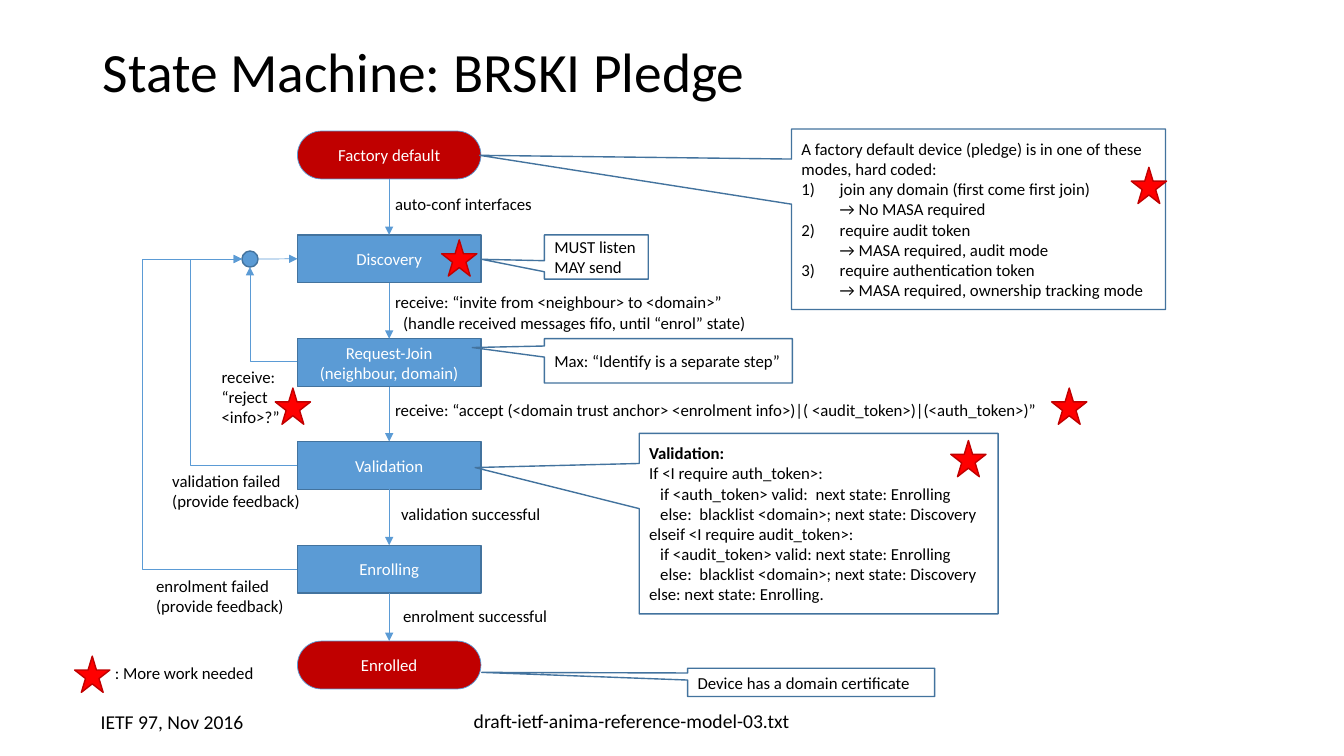
import pptx
import pptx.util
import pptx.dml.color
import pptx.enum.shapes
import pptx.enum.text
import pptx.oxml
import pptx.oxml.ns
import lxml.etree

Inches = pptx.util.Inches
Pt = pptx.util.Pt
qn = pptx.oxml.ns.qn
RGB = pptx.dml.color.RGBColor.from_string
SHAPE = pptx.enum.shapes.MSO_SHAPE
CONNECTOR = pptx.enum.shapes.MSO_CONNECTOR
ANCHOR = pptx.enum.text.MSO_ANCHOR
ALIGN = pptx.enum.text.PP_ALIGN

COLORS = {"state": "5B9BD5", "outline": "43739E", "terminal": "C00000",
          "star": "FF0000", "text": "000000", "light": "FFFFFF"}

presentation = pptx.Presentation()
presentation.slide_width = Inches(13.33)
presentation.slide_height = Inches(7.5)
slide = presentation.slides.add_slide(presentation.slide_layouts[6])


def write_text(text, *, shape=None, at=None, size=12, color="text", align=ALIGN.LEFT,
               anchor=ANCHOR.MIDDLE, wrap=True, bold_first=False, indents=None, numbered=()):
    if shape is None:
        shape = slide.shapes.add_textbox(*map(Inches, at))
    frame = shape.text_frame
    frame.word_wrap = wrap
    frame.vertical_anchor = anchor
    for index, line in enumerate(text.split("\n")):
        paragraph = frame.paragraphs[0] if index == 0 else frame.add_paragraph()
        paragraph.text = line
        paragraph.alignment = align
        for run in paragraph.runs:
            run.font.name = "Calibri"
            run.font.size = Pt(size)
            run.font.color.rgb = RGB(COLORS[color])
            run.font.bold = bold_first and index == 0
        for line_break in paragraph._p.findall(qn("a:br")):
            lxml.etree.SubElement(line_break, qn("a:rPr")).set("sz", str(size * 100))
        properties = paragraph._p.get_or_add_pPr()
        if indents and index in indents:
            properties.set("marL", str(Inches(indents[index])))
        if index in numbered:
            properties.set("marL", str(Inches(0.38)))
            properties.set("indent", str(Inches(-0.38)))
            lxml.etree.SubElement(properties, qn("a:buAutoNum")).set("type", "arabicParenR")
    return shape


def style_shape(shape, fill, line, width=1):
    shape.shadow.inherit = False
    if fill:
        shape.fill.solid()
        shape.fill.fore_color.rgb = RGB(COLORS[fill])
    else:
        shape.fill.background()
    shape.line.color.rgb = RGB(COLORS[line])
    shape.line.width = Pt(width)
    return shape


write_text("State Machine: BRSKI Pledge", at=(0.92, 0.4, 11.5, 0.59), size=39.6)
write_text("IETF 97, Nov 2016", at=(0.9, 6.99, 1.63, 0.34), size=14, wrap=False)
write_text("draft-ietf-anima-reference-model-03.txt", at=(4.6, 6.98, 3.38, 0.34),
           size=14, wrap=False)

STATE_LEFT, STATE_WIDTH, STATE_HEIGHT = 2.95, 1.82, 0.475
states = []
for name, top, terminal in [
    ("Factory default", 1.3, True),
    ("Discovery", 2.33, False),
    ("Request-Join\n(neighbour, domain)", 3.36, False),
    ("Validation", 4.38, False),
    ("Enrolling", 5.41, False),
    ("Enrolled", 6.36, True),
]:
    state = slide.shapes.add_shape(
        SHAPE.ROUNDED_RECTANGLE if terminal else SHAPE.RECTANGLE,
        Inches(STATE_LEFT), Inches(top), Inches(STATE_WIDTH), Inches(STATE_HEIGHT))
    if terminal:
        state.adjustments[0] = 0.5
        style_shape(state, "terminal", "state", 0.5)
    else:
        style_shape(state, "state", "outline")
    write_text(name, shape=state, color="light", align=ALIGN.CENTER)
    states.append(state)

JOIN_X, JOIN_Y, JOIN_RADIUS = 2.48, 2.57, 0.08
style_shape(slide.shapes.add_shape(
    SHAPE.OVAL, Inches(JOIN_X - JOIN_RADIUS), Inches(JOIN_Y - JOIN_RADIUS),
    Inches(2 * JOIN_RADIUS), Inches(2 * JOIN_RADIUS)), "state", "outline")

arrows = []
for upper, lower in zip(states, states[1:]):
    arrow = slide.shapes.add_connector(CONNECTOR.STRAIGHT, 0, 0, 0, 0)
    arrow.begin_connect(upper, 2)
    arrow.end_connect(lower, 0)
    arrows.append(arrow)

arrow = slide.shapes.add_connector(
    CONNECTOR.STRAIGHT, Inches(JOIN_X + JOIN_RADIUS), Inches(JOIN_Y),
    Inches(STATE_LEFT), Inches(JOIN_Y))
arrow.end_connect(states[1], 1)
arrows.append(arrow)

for start_y, end_x, end_y, bend_x in [
    (3.59, JOIN_X, JOIN_Y + JOIN_RADIUS, None),
    (4.62, JOIN_X - JOIN_RADIUS, JOIN_Y, 1.89),
    (5.65, JOIN_X - JOIN_RADIUS, JOIN_Y, 1.41),
]:
    arrow = slide.shapes.add_connector(
        CONNECTOR.ELBOW, Inches(STATE_LEFT), Inches(start_y), Inches(end_x), Inches(end_y))
    geometry = arrow._element.spPr.find(qn("a:prstGeom"))
    if bend_x is None:
        geometry.set("prst", "bentConnector2")
    else:
        bend = round((STATE_LEFT - bend_x) / (STATE_LEFT - end_x) * 100000)
        guide = lxml.etree.SubElement(geometry.find(qn("a:avLst")), qn("a:gd"))
        guide.set("name", "adj1")
        guide.set("fmla", f"val {bend}")
    arrows.append(arrow)

for arrow in arrows:
    arrow.line.color.rgb = RGB(COLORS["state"])
    arrow.line.width = Pt(0.5)
    lxml.etree.SubElement(arrow.line._get_or_add_ln(), qn("a:tailEnd")).set("type", "triangle")
    lxml.etree.SubElement(arrow._element.spPr, qn("a:effectLst"))

for text, at, indents in [
    ("auto-conf interfaces", (3.82, 1.87, 1.57, 0.3), None),
    ("receive: “invite from <neighbour> to <domain>”\n"
     "(handle received messages fifo, until “enrol” state)", (3.82, 2.85, 3.72, 0.5), {1: 0.08}),
    ("receive: “accept (<domain trust anchor> <enrolment info>)|"
     "( <audit_token>)|(<auth_token>)”", (3.82, 3.92, 6.63, 0.3), None),
    ("validation successful", (3.88, 4.95, 1.6, 0.3), None),
    ("enrolment successful", (3.9, 5.96, 1.65, 0.3), None),
    ("receive:\n“reject\n<info>?”", (2.1, 3.59, 0.8, 0.71), None),
    ("validation failed\n(provide feedback)", (1.61, 4.62, 1.48, 0.5), None),
    ("enrolment failed\n(provide feedback)", (1.45, 5.66, 1.48, 0.5), None),
    (": More work needed", (1.04, 6.53, 1.6, 0.3), None),
]:
    write_text(text, at=at, anchor=ANCHOR.TOP, wrap=False, indents=indents)

for text, at, pointer, options in [
    ("A factory default device (pledge) is in one of these modes, hard coded:\n"
     "join any domain (first come first join)\v→ No MASA required\n"
     "require audit token\v→ MASA required, audit mode\n"
     "require authentication token\v→ MASA required, ownership tracking mode",
     (7.85, 1.28, 3.71, 1.79), (-1.334, -0.354), {"numbered": (1, 2, 3)}),
    ("MUST listen\nMAY send", (5.4, 2.33, 1.03, 0.44), (-1.105, 0.052), {}),
    ("Max: “Identify is a separate step”", (5.4, 3.36, 2.46, 0.44), (-0.791, -0.299), {}),
    ("Validation:\nIf <I require auth_token>:\n"
     "if <auth_token> valid:  next state: Enrolling\n"
     "else:  blacklist <domain>; next state: Discovery\n"
     "elseif <I require audit_token>:\n"
     "if <audit_token> valid: next state: Enrolling\n"
     "else:  blacklist <domain>; next state: Discovery\n"
     "else: next state: Enrolling.",
     (6.34, 4.3, 3.56, 1.79), (-0.957, -0.311),
     {"bold_first": True, "indents": dict.fromkeys((2, 3, 5, 6), 0.11)}),
    ("Device has a domain certificate", (6.82, 6.63, 2.45, 0.28), (-1.334, -0.354), {}),
]:
    callout = slide.shapes.add_shape(SHAPE.RECTANGULAR_CALLOUT, *map(Inches, at))
    callout.adjustments[0], callout.adjustments[1] = pointer
    style_shape(callout, None, "outline")
    write_text(text, shape=callout, **options)

for left, top in [(0.74, 6.51), (10.43, 3.85), (9.43, 4.37),
                  (4.38, 2.38), (2.73, 3.85), (11.22, 1.66)]:
    star = slide.shapes.add_shape(
        SHAPE.STAR_5_POINT, Inches(left), Inches(top), Inches(0.35), Inches(0.36))
    style_shape(star, "star", "terminal")

presentation.save("out.pptx")
